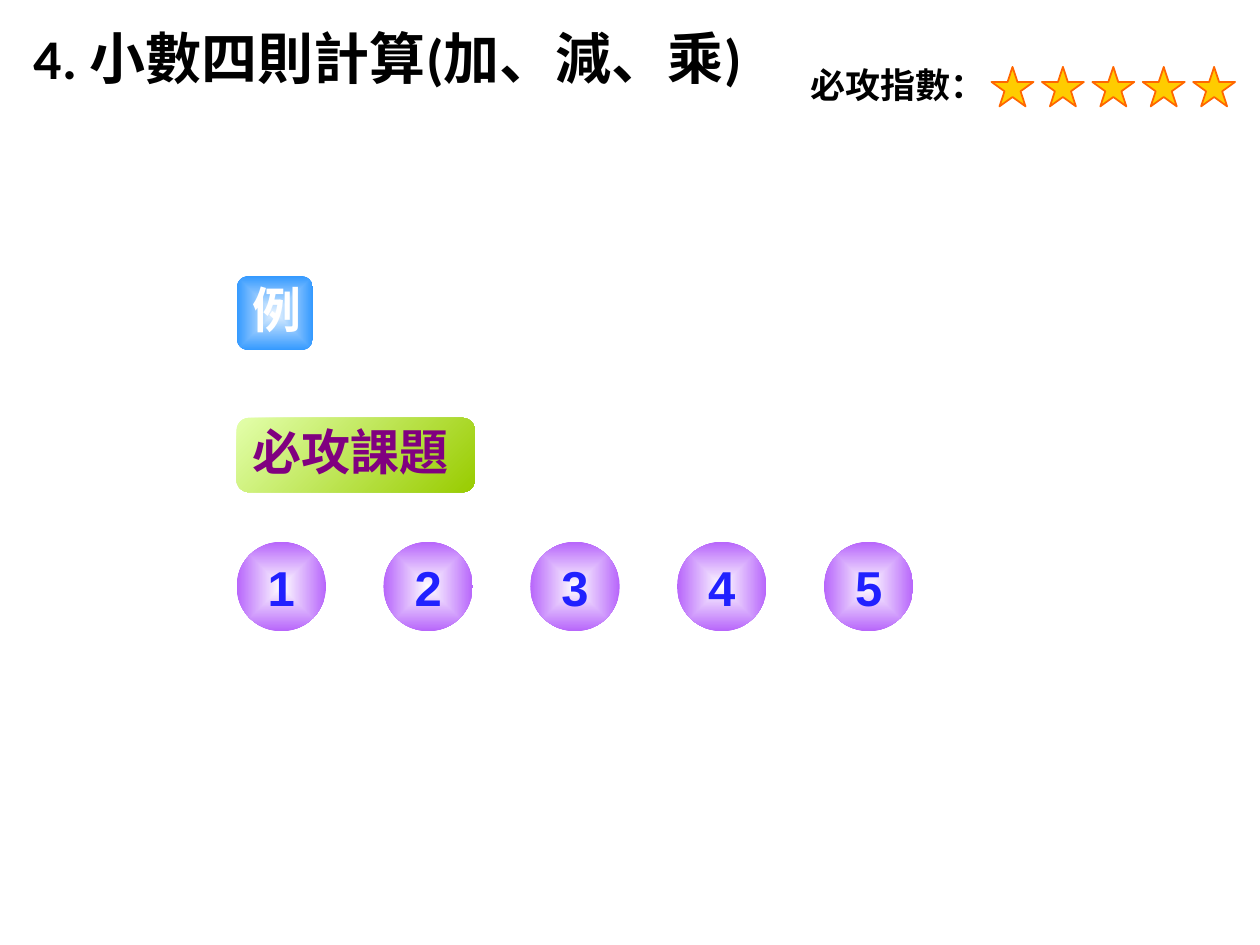
from lxml import etree
from pptx import Presentation
from pptx.dml.color import RGBColor
from pptx.enum.shapes import MSO_SHAPE as SHAPE
from pptx.enum.text import MSO_ANCHOR as ANCHOR, PP_ALIGN as ALIGN
from pptx.oxml.ns import qn
from pptx.util import Pt

BLACK = RGBColor(0x00, 0x00, 0x00)
WHITE = RGBColor(0xFF, 0xFF, 0xFF)
GOLD = RGBColor(0xFF, 0xCC, 0x00)
ORANGE = RGBColor(0xFF, 0x66, 0x00)
LILAC = RGBColor(0xB7, 0x65, 0xFB)
BLUE = RGBColor(0x21, 0x21, 0xFF)
PURPLE = RGBColor(0x80, 0x00, 0x80)
PALE_GREEN = RGBColor(0xE3, 0xFF, 0xAB)
GREEN = RGBColor(0x99, 0xCC, 0x00)
PALE_SKY = RGBColor(0xE5, 0xF2, 0xFF)
SKY = RGBColor(0x33, 0x99, 0xFF)
CJK = "Noto Sans CJK SC"


def set_text(s, text, size, font, color, align=ALIGN.LEFT,
             anchor=ANCHOR.TOP, spacing=None, wrap=True):
    tf = s.text_frame
    tf.text = text
    tf.word_wrap = wrap
    tf.vertical_anchor = anchor
    p = tf.paragraphs[0]
    p.alignment = align
    if spacing:
        p.line_spacing = Pt(spacing)
    r = p.runs[0]
    r.font.size = Pt(size)
    r.font.bold = True
    r.font.color.rgb = color
    r.font.name = font
    etree.SubElement(r.font._element, qn("a:ea")).set("typeface", CJK)


def add_label(slide, box, text, size, font, spacing=None):
    s = slide.shapes.add_textbox(*map(Pt, box))
    set_text(s, text, size, font, BLACK, spacing=spacing)


def add_plain_shape(slide, kind, box):
    s = slide.shapes.add_shape(kind, *map(Pt, box))
    s.shadow.inherit = False
    return s


def add_gradient_shape(slide, kind, box, start, end, from_center):
    s = add_plain_shape(slide, kind, box)
    s.line.fill.background()
    s.fill.gradient()
    s.fill.gradient_angle = 315
    for stop, color, position in zip(s.fill.gradient_stops, (start, end), (0, 1)):
        stop.color.rgb = color
        stop.position = position
    if from_center:
        lin = s._element.spPr.find(".//" + qn("a:lin"))
        path = etree.Element(qn("a:path"), {"path": "shape"})
        etree.SubElement(path, qn("a:fillToRect"), dict.fromkeys("ltrb", "50000"))
        lin.getparent().replace(lin, path)
    return s


def add_rating(slide, left, top, count):
    add_label(slide, (left, top, 143.3, 33.8), "必攻指數：", 20, "Arial", 21.6)
    for i in range(count):
        box = (left + 110.8 + 28.8 * i, top + 2.9, 24, 22.6)
        s = add_plain_shape(slide, SHAPE.STAR_5_POINT, box)
        s.fill.solid()
        s.fill.fore_color.rgb = GOLD
        s.line.color.rgb = ORANGE
        s.line.width = Pt(1)


def add_button(slide, box, text, start, end, color, from_center, align):
    s = add_gradient_shape(slide, SHAPE.ROUNDED_RECTANGLE, box, start, end, from_center)
    set_text(s, text, 28, CJK, color, align, spacing=30)


def add_number_row(slide, left, top, count):
    for i in range(count):
        box = (left + 83.9 * i, top, 51.1, 51.1)
        s = add_gradient_shape(slide, SHAPE.OVAL, box, WHITE, LILAC, True)
        set_text(s, str(i + 1), 28, "Arial", BLUE, ALIGN.CENTER, ANCHOR.MIDDLE, wrap=False)


def main():
    prs = Presentation()
    prs.slide_width, prs.slide_height = Pt(720), Pt(540)
    slide = prs.slides.add_slide(prs.slide_layouts[6])
    add_label(slide, (12.2, 10.1, 506.9, 59), "4. 小數四則計算(加、減、乘)", 32, "Calibri")
    add_rating(slide, 455.8, 35.3, 5)
    add_button(slide, (135.2, 157.7, 43.7, 42.5), "例", PALE_SKY, SKY, WHITE, True, ALIGN.CENTER)
    add_button(slide, (135.2, 238.8, 136.1, 42.5), "必攻課題", PALE_GREEN, GREEN, PURPLE,
               False, ALIGN.LEFT)
    add_number_row(slide, 135.2, 309.6, 5)
    prs.save("out.pptx")


if __name__ == "__main__":
    main()
